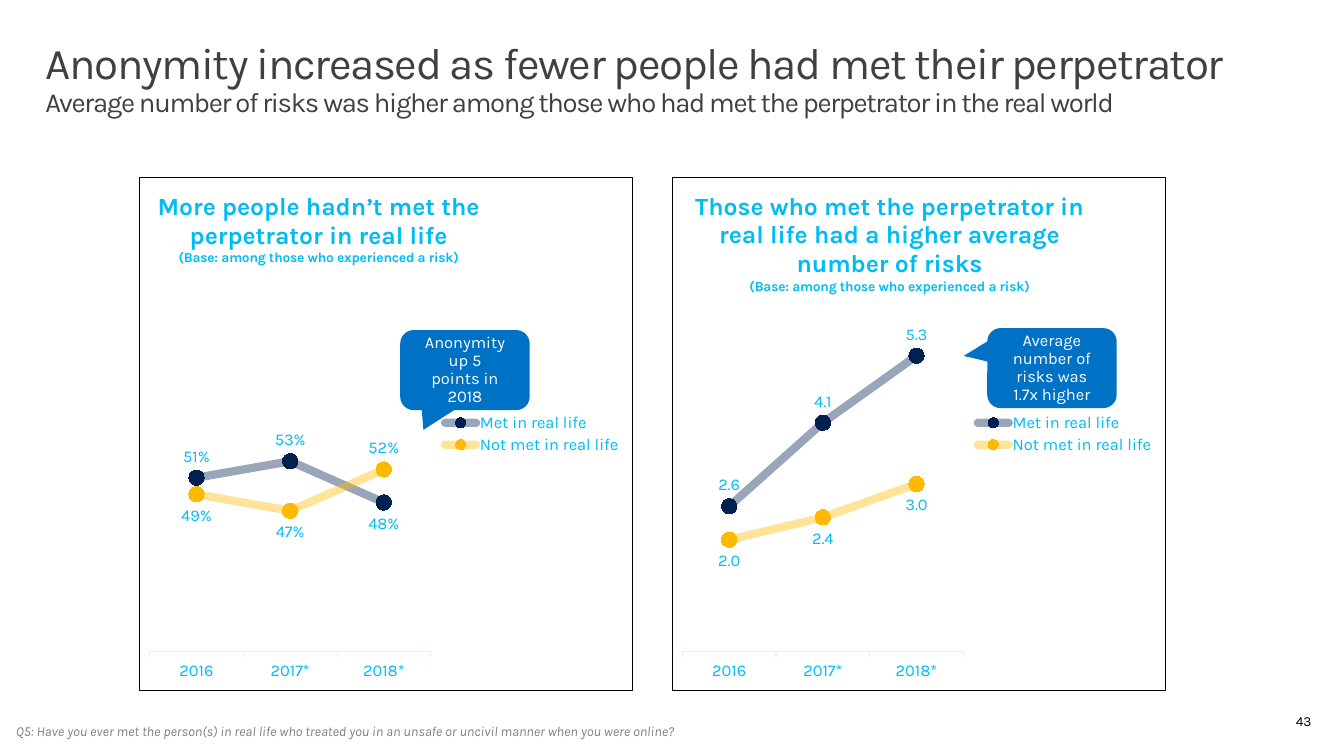
from lxml import etree
from pptx import Presentation
from pptx.chart.data import CategoryChartData
from pptx.dml.color import RGBColor
from pptx.enum.chart import (XL_CHART_TYPE, XL_LABEL_POSITION, XL_MARKER_STYLE,
                             XL_TICK_LABEL_POSITION, XL_TICK_MARK)
from pptx.enum.shapes import MSO_SHAPE
from pptx.enum.text import MSO_ANCHOR, PP_ALIGN
from pptx.oxml import parse_xml
from pptx.oxml.ns import qn
from pptx.util import Inches, Pt

LINE_MARKERS = XL_CHART_TYPE.LINE_MARKERS
ABOVE, BELOW = XL_LABEL_POSITION.ABOVE, XL_LABEL_POSITION.BELOW
CIRCLE = XL_MARKER_STYLE.CIRCLE
LOW, TICK_OUT, TICK_NONE = XL_TICK_LABEL_POSITION.LOW, XL_TICK_MARK.OUTSIDE, XL_TICK_MARK.NONE
CALLOUT = MSO_SHAPE.ROUNDED_RECTANGULAR_CALLOUT
TOP, MIDDLE = MSO_ANCHOR.TOP, MSO_ANCHOR.MIDDLE
LEFT, CENTER, RIGHT = PP_ALIGN.LEFT, PP_ALIGN.CENTER, PP_ALIGN.RIGHT

FONT = "Karla"
CYAN, NAVY, YELLOW, BLUE = "00BCF2", "002050", "FFB900", "0072C6"
YEARS = ("2016", "2017*", "2018*")
BASE = "(Base: among those who experienced a risk)"
PANEL_TOP, PANEL_W, PANEL_H = 1.79, 5, 5.2

# Callout offsets are relative to their panel; label places follow the years
PANELS = [
    dict(left=1.41, heading="More people hadn’t met the perpetrator in real life",
         heading_at=(0.03, 0.02), plot_at=(0.02, 0.28, 0.57, 0.644),
         scale=(0.3, 0.7), number_format="0%",
         series=[("Met in real life", (0.51, 0.53, 0.48), NAVY, (ABOVE, ABOVE, BELOW)),
                 ("Not met in real life", (0.49, 0.47, 0.52), YELLOW, (BELOW, BELOW, ABOVE))],
         callout="Anonymity up 5 points in 2018", callout_at=(2.64, 1.55),
         pointer=(-0.321, 0.746, 0.167)),
    dict(left=6.8, heading="Those who met the perpetrator in real life had a higher "
                           "average number of risks",
         heading_at=(0.04, 0.02), plot_at=(0.02, 0.272, 0.57, 0.652),
         scale=(0, 6), number_format="0.0",
         series=[("Met in real life", (2.6, 4.1, 5.3), NAVY, (ABOVE,) * 3),
                 ("Not met in real life", (2.0, 2.4, 3.0), YELLOW, (BELOW,) * 3)],
         callout="Average number of risks was 1.7x higher", callout_at=(3.19, 1.53),
         pointer=(-0.682, -0.152, 0.167)),
]


def rgb(color):
    return RGBColor.from_string(color)


def style_font(font, size, color, **formats):
    font.color.rgb = rgb(color)
    for name, value in dict(name=FONT, size=Pt(size), **formats).items():
        setattr(font, name, value)


def fill_frame(frame, lines, color, align=LEFT, anchor=TOP, insets=(0.1, 0.05),
               wrap=True, line_spacing=1.0, tracking=0, **formats):
    side, end = map(Inches, insets)
    settings = dict(word_wrap=wrap, vertical_anchor=anchor, margin_left=side,
                    margin_right=side, margin_top=end, margin_bottom=end)
    for name, value in settings.items():
        setattr(frame, name, value)
    for i, (words, size) in enumerate(lines):
        line = frame.add_paragraph() if i else frame.paragraphs[0]
        line.alignment, line.line_spacing = align, line_spacing
        run = line.add_run()
        run.text = words
        style_font(run.font, size, color, **formats)
        if tracking:
            run.font._element.set("spc", str(tracking))


def add_text(slide, box, lines, color, **formats):
    frame = slide.shapes.add_textbox(*map(Inches, box)).text_frame
    fill_frame(frame, lines, color, **formats)


def place(part, index, fractions, inner=False):
    """Give a chart part a fixed place, in fractions of the chart."""
    for old in part.findall(qn("c:layout")):
        part.remove(old)
    layout = etree.Element(qn("c:layout"))
    manual = etree.SubElement(layout, qn("c:manualLayout"))
    if inner:
        etree.SubElement(manual, qn("c:layoutTarget")).set("val", "inner")
    for side in "xy":
        etree.SubElement(manual, qn(f"c:{side}Mode")).set("val", "edge")
    for side, value in zip("xywh", fractions):
        etree.SubElement(manual, qn(f"c:{side}")).set("val", str(value))
    part.insert(index, layout)


def style_series(series, color, places, number_format):
    series.smooth = False
    series.format.line.width = Pt(6)
    series.format.line.color.rgb = rgb(color)
    line = series.format.line._ln
    line.set("cap", "rnd")
    etree.SubElement(line.find(".//" + qn("a:srgbClr")), qn("a:alpha")).set("val", "40000")

    marker = series.marker
    marker.style, marker.size = CIRCLE, 11
    marker.format.fill.solid()
    marker.format.fill.fore_color.rgb = rgb(color)
    marker.format.line.color.rgb = rgb(color)

    labels = series.data_labels
    formats = dict(show_value=True, position=places[0], number_format=number_format,
                   number_format_is_linked=False)
    for name, value in formats.items():
        setattr(labels, name, value)
    style_font(labels.font, 12, CYAN)
    for i, position in enumerate(places):
        if position != places[0]:
            label = series.points[i].data_label
            style_font(label.font, 12, CYAN)
            label.position = position


def add_panel(slide, box, panel):
    left, top, width, height = box
    data = CategoryChartData(number_format=panel["number_format"])
    data.categories = YEARS
    for name, values, _, _ in panel["series"]:
        data.add_series(name, values)
    chart = slide.shapes.add_chart(LINE_MARKERS, *map(Inches, box), data).chart
    style_font(chart.font, 10, CYAN)

    # Frame
    chart.element.find(qn("c:txPr")).addprevious(parse_xml(
        '<c:spPr xmlns:c="http://schemas.openxmlformats.org/drawingml/2006/chart" '
        'xmlns:a="http://schemas.openxmlformats.org/drawingml/2006/main"><a:noFill/>'
        '<a:ln w="9525"><a:solidFill><a:srgbClr val="000000"/></a:solidFill></a:ln></c:spPr>'))

    # Heading and legend
    chart.has_title = True
    heading = chart.chart_title.text_frame
    for i, (words, size) in enumerate([(panel["heading"], 18), (BASE, 10)]):
        line = heading.add_paragraph() if i else heading.paragraphs[0]
        line.alignment = CENTER
        run = line.add_run()
        run.text = words
        style_font(run.font, size, CYAN, bold=True)
    chart.has_legend = True
    chart.legend.include_in_layout = False
    style_font(chart.legend.font, 12, CYAN)

    # Axes
    years, scale = chart.category_axis, chart.value_axis
    years.major_tick_mark, years.minor_tick_mark = TICK_OUT, TICK_NONE
    years.tick_label_position = LOW
    years.format.line.color.rgb = rgb("D7F6FF")
    years.format.line.width = Pt(0.75)
    style_font(years.tick_labels.font, 12, CYAN)
    scale.minimum_scale, scale.maximum_scale = panel["scale"]
    scale.has_major_gridlines = scale.visible = False

    # Lines
    chart.plots[0].vary_by_categories = False
    for series, (_, _, color, places) in zip(chart.plots[0].series, panel["series"]):
        style_series(series, color, places, panel["number_format"])

    chart_parts = chart.element.find(qn("c:chart"))
    place(chart_parts.find(qn("c:title")), 1, panel["heading_at"])
    place(chart_parts.find(qn("c:legend")), 1, (0.61, 0.455, 0.37, 0.09))
    place(chart_parts.find(qn("c:plotArea")), 0, panel["plot_at"], inner=True)

    # Callout
    dx, dy = panel["callout_at"]
    callout = slide.shapes.add_shape(
        CALLOUT, *map(Inches, (left + dx, top + dy, 1.31, 0.81)))
    callout.shadow.inherit = False
    callout.fill.solid()
    callout.fill.fore_color.rgb = rgb(BLUE)
    callout.line.fill.background()
    for i, value in enumerate(panel["pointer"]):
        callout.adjustments[i] = value
    fill_frame(callout.text_frame, [(panel["callout"], 12)], "FFFFFF", align=CENTER,
               anchor=MIDDLE, insets=(0.2, 0.16), line_spacing=0.9)


def add_header(slide, box):
    add_text(slide, box, [
        ("Anonymity increased as fewer people had met their perpetrator", 32),
        ("Average number of risks was higher among those who had met the perpetrator "
         "in the real world", 20)],
        "404040", insets=(0.16, 0.1), line_spacing=0.9, tracking=-100)


def add_footer(slide, box):
    left, top, width, height = box
    add_text(slide, (left + width - 3.17, top, 3.17, 0.41), [("43", 10)], "000000",
             align=RIGHT, anchor=MIDDLE)
    add_text(slide, (left, top + 0.17, 7.59, 0.47),
             [("Q5: Have you ever met the person(s) in real life who treated you in an "
               "unsafe or uncivil manner when you were online?", 10)],
             "808080", insets=(0.2, 0.16), wrap=False, line_spacing=0.9, italic=True)


def main():
    deck = Presentation()
    deck.slide_width, deck.slide_height = Inches(13.6), Inches(7.65)
    slide = deck.slides.add_slide(deck.slide_layouts[6])
    add_header(slide, (0.3, 0.32, 13, 1))
    for panel in PANELS:
        add_panel(slide, (panel["left"], PANEL_TOP, PANEL_W, PANEL_H), panel)
    add_footer(slide, (-0.04, 7.09, 13.41, 0.64))
    deck.save("out.pptx")


if __name__ == "__main__":
    main()
